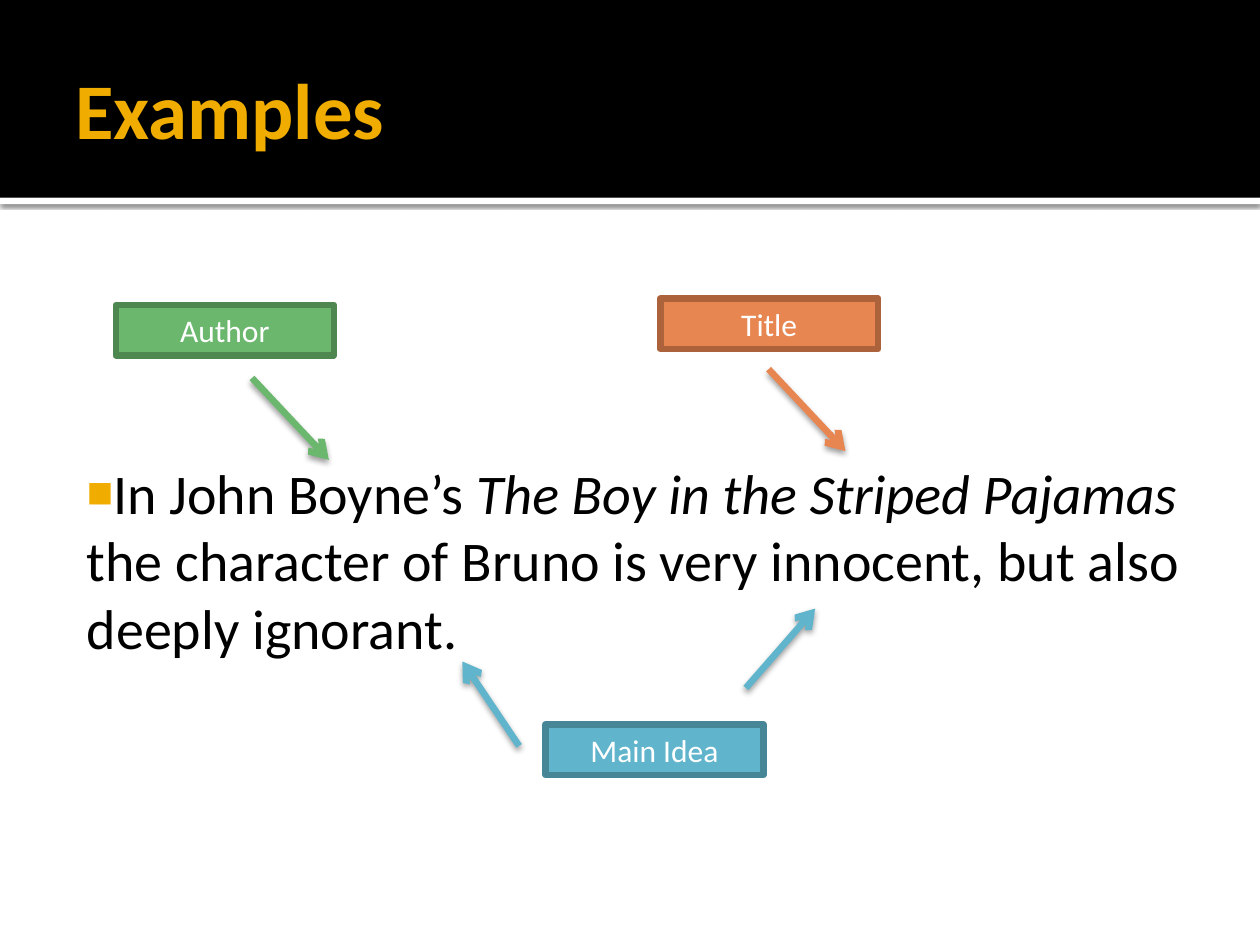
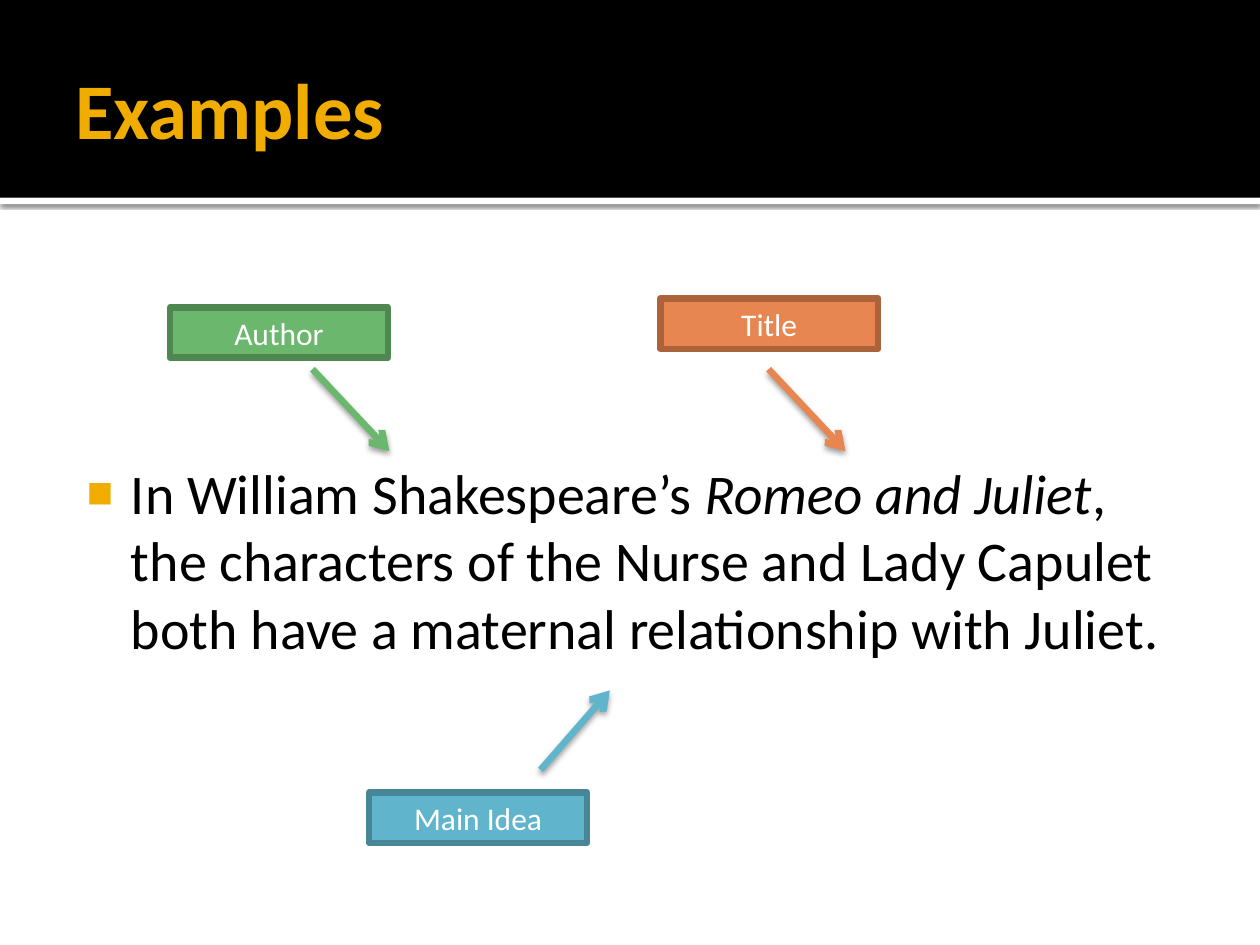
"""Build two slides that label the parts of a literary thesis sentence."""
from dataclasses import dataclass

import pptx
import pptx.dml.color
import pptx.enum.shapes
import pptx.enum.text
import pptx.oxml
import pptx.oxml.ns
import pptx.util

Inches, Pt = pptx.util.Inches, pptx.util.Pt
Align, Anchor = pptx.enum.text.PP_ALIGN, pptx.enum.text.MSO_ANCHOR
Fit = pptx.enum.text.MSO_AUTO_SIZE
RECT = pptx.enum.shapes.MSO_SHAPE.RECTANGLE
STRAIGHT = pptx.enum.shapes.MSO_CONNECTOR.STRAIGHT

WIDE, HIGH = Inches(10), Inches(7.5)
COLS, ROWS = 100, 75
TAG_WIDE, TAG_HIGH = 17.3, 4
FONT = "Calibri"
BLACK, WHITE, GOLD = "000000", "FFFFFF", "F0AD00"
STROKE = Pt(3.78)
DOWN, UP, BACK = (6.1, 6.5), (5.5, -6.3), (-4.5, -6.7)


@dataclass(frozen=True)
class Shade:
    """Soft shadow cast straight down, in points and percent."""
    alpha: int
    blur: float
    drop: float


@dataclass(frozen=True)
class Kind:
    """Wording and colours of a label."""
    text: str
    fill: str
    edge: str


@dataclass(frozen=True)
class Arrow:
    """Arrow start in columns and rows, and its reach."""
    col: float
    row: float
    reach: tuple[float, float]


@dataclass(frozen=True)
class Tag:
    """Label place in columns and rows, with its arrows."""
    kind: Kind
    col: float
    row: float
    arrows: tuple[Arrow, ...]


@dataclass(frozen=True)
class Page:
    """Sentence parts, paragraph indents and labels of one slide."""
    lead: str
    work: str
    rest: str
    margin: float
    hang: float
    tags: tuple[Tag, ...]


STRIP_SHADE = Shade(60, 2.5, 0.8)
ARROW_SHADE = Shade(38, 3.5, 2)

AUTHOR = Kind("Author", "6BB76D", "4F8751")
TITLE = Kind("Title", "E88651", "AC633C")
IDEA = Kind("Main Idea", "60B5CC", "478697")
TITLE_TAG = Tag(TITLE, 52.4, 23.7, (Arrow(61, 29.3, DOWN),))

PAGES = (
    Page("In John Boyne’s ", "The Boy in the Striped Pajamas ",
         "the character of Bruno is very innocent, but also deeply ignorant.",
         0.13, 0,
         (Tag(AUTHOR, 9.2, 24.2, (Arrow(20, 30, DOWN),)),
          TITLE_TAG,
          Tag(IDEA, 43.3, 57.5,
              (Arrow(59.2, 54.6, UP), Arrow(41.2, 59.2, BACK))))),
    Page("In William Shakespeare’s ", "Romeo and Juliet",
         ", the characters of the Nurse and Lady Capulet both have "
         "a maternal relationship with Juliet.",
         0.48, -0.35,
         (Tag(AUTHOR, 13.5, 24.4, (Arrow(24.8, 29.3, DOWN),)),
          TITLE_TAG,
          Tag(IDEA, 29.3, 62.9, (Arrow(42.9, 61.1, UP),)))),
)


def hue(code: str) -> pptx.dml.color.RGBColor:
    """Turn a hex string into a colour."""
    return pptx.dml.color.RGBColor.from_string(code)


def grid(col: float, row: float) -> tuple[int, int]:
    """Turn columns and rows into slide lengths."""
    return round(WIDE * col / COLS), round(HIGH * row / ROWS)


def apply(item, values: dict) -> None:
    """Set each named value on the item."""
    for name, value in values.items():
        setattr(item, name, value)


def graft(parent, xml: str) -> None:
    """Append one drawing element to the parent."""
    space = pptx.oxml.ns.nsdecls("a")
    parent.append(pptx.oxml.parse_xml(xml.replace(" ", f" {space} ", 1)))


def style(run, size: float, code: str, **more) -> None:
    """Format the font of a run."""
    apply(run.font, {"name": FONT, "size": Pt(size), **more})
    run.font.color.rgb = hue(code)


def shade(shape, cast: Shade) -> None:
    """Give a shape or connector its shadow."""
    graft(shape.element.spPr,
          f'<a:effectLst ><a:outerShdw blurRad="{Pt(cast.blur)}" '
          f'dist="{Pt(cast.drop)}" dir="5400000" rotWithShape="0">'
          f'<a:srgbClr val="{BLACK}"><a:alpha val="{cast.alpha * 1000}"/>'
          '</a:srgbClr></a:outerShdw></a:effectLst>')


def block(slide, col: float, row: float, wide: float, high: float, code: str):
    """Draw a filled rectangle without outline."""
    shape = slide.shapes.add_shape(RECT, *grid(col, row), *grid(wide, high))
    shape.fill.solid()
    shape.fill.fore_color.rgb = hue(code)
    shape.line.fill.background()
    return shape


def head(slide, text: str) -> None:
    """Draw the top band and set the title on it."""
    shade(block(slide, 0, 15.7, COLS, 0.5, WHITE), STRIP_SHADE)
    block(slide, 0, 0, COLS, 15.7, BLACK).shadow.inherit = False
    title = slide.shapes.title
    slide.shapes.element.append(title.element)
    left, top = grid(5, 1.7)
    width, height = grid(90, 13.7)
    apply(title, {"left": left, "top": top, "width": width, "height": height})
    frame = title.text_frame
    apply(frame, {"margin_left": Inches(0.1), "margin_right": Inches(0.05),
                  "vertical_anchor": Anchor.MIDDLE, "auto_size": Fit.NONE,
                  "word_wrap": True})
    para = frame.paragraphs[0]
    para.alignment = Align.LEFT
    run = para.add_run()
    run.text = text
    style(run, 45, GOLD, bold=True)


def body(slide, page: Page) -> None:
    """Write the bulleted sentence with the work in italics."""
    box = slide.shapes.add_textbox(*grid(5, 19.4), *grid(90, 50.6))
    frame = box.text_frame
    apply(frame, {"word_wrap": True, "margin_left": Inches(0.06),
                  "margin_top": Inches(1.7)})
    para = frame.paragraphs[0]
    props = para._p.get_or_add_pPr()
    props.set("marL", str(Inches(page.margin)))
    props.set("indent", str(Inches(page.hang)))
    for xml in (f'<a:buClr ><a:srgbClr val="{GOLD}"/></a:buClr>',
                '<a:buSzPct val="50000"/>',
                f'<a:buFont typeface="{FONT}"/>',
                '<a:buChar char="■"/>'):
        graft(props, xml)
    for text in (page.lead, page.work, page.rest):
        run = para.add_run()
        run.text = text
        style(run, 32, BLACK, italic=text == page.work)


def point(slide, arrow: Arrow, code: str) -> None:
    """Draw one arrow with its shadow."""
    across, along = arrow.reach
    line = slide.shapes.add_connector(
        STRAIGHT, *grid(arrow.col, arrow.row),
        *grid(arrow.col + across, arrow.row + along))
    line.line.width = STROKE
    line.line.color.rgb = hue(code)
    graft(line.line._get_or_add_ln(), '<a:tailEnd type="arrow"/>')
    shade(line, ARROW_SHADE)


def label(slide, tag: Tag) -> None:
    """Draw one label box and its arrows."""
    kind = tag.kind
    for arrow in tag.arrows:
        point(slide, arrow, kind.fill)
    box = block(slide, tag.col, tag.row, TAG_WIDE, TAG_HIGH, kind.fill)
    box.shadow.inherit = False
    box.line.width = STROKE
    box.line.color.rgb = hue(kind.edge)
    apply(box.text_frame, {"word_wrap": True, "vertical_anchor": Anchor.TOP,
                           "auto_size": Fit.SHAPE_TO_FIT_TEXT})
    para = box.text_frame.paragraphs[0]
    para.alignment = Align.CENTER
    run = para.add_run()
    run.text = kind.text
    style(run, 18, WHITE)


def main() -> None:
    """Build and save the deck."""
    deck = pptx.Presentation()
    apply(deck, {"slide_width": WIDE, "slide_height": HIGH})
    for page in PAGES:
        slide = deck.slides.add_slide(deck.slide_layouts[5])
        head(slide, "Examples")
        body(slide, page)
        for tag in page.tags:
            label(slide, tag)
    deck.save("out.pptx")


if __name__ == "__main__":
    main()
